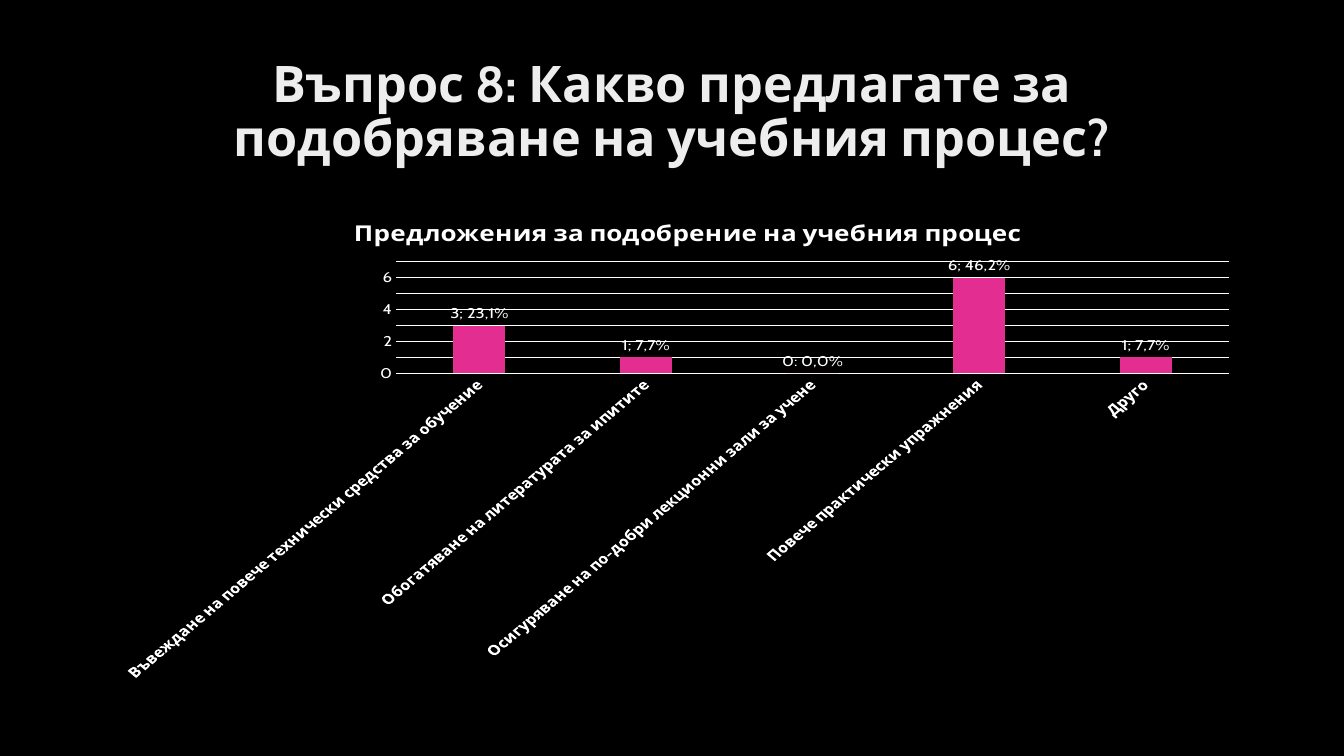
from dataclasses import dataclass

import pptx
import pptx.chart.chart
import pptx.chart.data
import pptx.dml.color
import pptx.enum.chart
import pptx.enum.text
import pptx.slide
import pptx.text.text
import pptx.util

Pt = pptx.util.Pt
RGBColor = pptx.dml.color.RGBColor

BLACK = RGBColor(0x00, 0x00, 0x00)
WHITE = RGBColor(0xFF, 0xFF, 0xFF)
LIGHT_GRAY = RGBColor(0xED, 0xED, 0xED)
PINK = RGBColor(0xE3, 0x2D, 0x91)
FONT_NAME = "Cabin"
AUTOMATIC_ROTATION = "-60000000"
CHART_TITLE = "Предложения за подобрение на учебния процес"


@dataclass(frozen=True)
class Suggestion:
    name: str
    votes: int
    label: str


SUGGESTIONS = [
    Suggestion("Въвеждане на повече технически средства за обучение", 3, "3; 23,1%"),
    Suggestion("Обогатяване на литературата за ипитите", 1, "1; 7,7%"),
    Suggestion("Осигуряване на по-добри лекционни зали за учене", 0, "0: 0,0%"),
    Suggestion("Повече практически упражнения", 6, "6; 46,2%"),
    Suggestion("Друго", 1, "1; 7,7%"),
]


def format_font(
    font: pptx.text.text.Font, size: float, bold: bool = False, color: RGBColor = WHITE
) -> None:
    font.name = FONT_NAME
    font.size = Pt(size)
    font.bold = bold
    font.color.rgb = color


def add_title(slide: pptx.slide.Slide) -> None:
    title = slide.shapes.title
    title.left, title.top, title.width, title.height = Pt(66), Pt(28.75), Pt(828), Pt(104.4)
    text_frame = title.text_frame
    text_frame.text = "Въпрос 8: Какво предлагате за подобряване на учебния процес?"
    text_frame.word_wrap = True
    text_frame.auto_size = pptx.enum.text.MSO_AUTO_SIZE.NONE
    text_frame.vertical_anchor = pptx.enum.text.MSO_ANCHOR.MIDDLE
    paragraph = text_frame.paragraphs[0]
    paragraph.alignment = pptx.enum.text.PP_ALIGN.CENTER
    paragraph.line_spacing = 0.9
    format_font(paragraph.runs[0].font, 36, True, LIGHT_GRAY)


def format_axes(chart: pptx.chart.chart.Chart) -> None:
    category_axis = chart.category_axis
    value_axis = chart.value_axis
    for axis, bold in ((category_axis, True), (value_axis, False)):
        axis.major_tick_mark = pptx.enum.chart.XL_TICK_MARK.NONE
        axis.minor_tick_mark = pptx.enum.chart.XL_TICK_MARK.NONE
        format_font(axis.tick_labels.font, 12, bold)
    category_axis.has_major_gridlines = False
    value_axis.has_major_gridlines = True
    for line in (category_axis.format.line, value_axis.major_gridlines.format.line):
        line.color.rgb = WHITE
        line.width = Pt(0.75)
    value_axis.format.line.fill.background()
    value_axis.minimum_scale = 0
    value_axis.maximum_scale = 7
    value_axis.major_unit = 1
    body = category_axis.tick_labels.font._element.getparent().getparent().getparent().bodyPr
    body.set("rot", AUTOMATIC_ROTATION)


def format_bars(chart: pptx.chart.chart.Chart) -> None:
    outside_end = pptx.enum.chart.XL_LABEL_POSITION.OUTSIDE_END
    plot = chart.plots[0]
    plot.gap_width = 219
    plot.overlap = -27
    plot.vary_by_categories = False
    series = plot.series[0]
    series.format.fill.solid()
    series.format.fill.fore_color.rgb = PINK
    series.data_labels.show_value = True
    series.data_labels.position = outside_end
    format_font(series.data_labels.font, 12)
    for index, suggestion in enumerate(SUGGESTIONS):
        data_label = series.points[index].data_label
        data_label.text_frame.text = suggestion.label
        format_font(data_label.text_frame.paragraphs[0].runs[0].font, 12)
        data_label.position = outside_end


def add_suggestion_chart(slide: pptx.slide.Slide) -> None:
    chart_data = pptx.chart.data.CategoryChartData()
    chart_data.categories = [suggestion.name for suggestion in SUGGESTIONS]
    chart_data.add_series(CHART_TITLE, [suggestion.votes for suggestion in SUGGESTIONS])
    chart = slide.shapes.add_chart(
        pptx.enum.chart.XL_CHART_TYPE.COLUMN_CLUSTERED,
        Pt(88.5), Pt(144), Pt(805.5), Pt(342.75), chart_data,
    ).chart
    format_font(chart.font, 10)
    chart.has_legend = False
    chart.has_title = True
    chart.chart_title.include_in_layout = False
    title_frame = chart.chart_title.text_frame
    title_frame.text = CHART_TITLE
    format_font(title_frame.paragraphs[0].runs[0].font, 18.6, True)
    format_axes(chart)
    format_bars(chart)


def main() -> None:
    presentation = pptx.Presentation()
    presentation.slide_width = Pt(960)
    presentation.slide_height = Pt(540)
    slide = presentation.slides.add_slide(presentation.slide_layouts.get_by_name("Title Only"))
    slide.background.fill.solid()
    slide.background.fill.fore_color.rgb = BLACK
    add_title(slide)
    add_suggestion_chart(slide)
    presentation.save("out.pptx")


if __name__ == "__main__":
    main()
